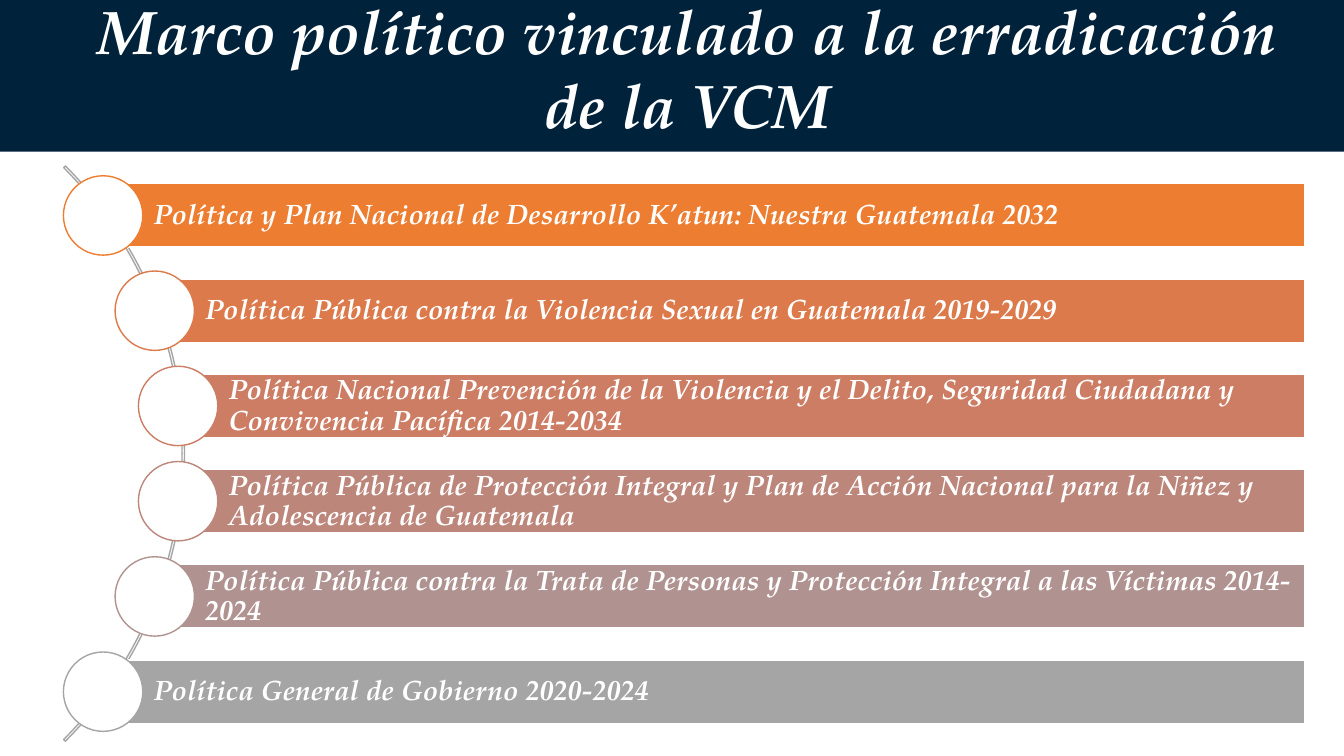
from dataclasses import dataclass
from math import sqrt

from pptx import Presentation
from pptx.dml.color import RGBColor
from pptx.enum.shapes import MSO_SHAPE as SHAPE
from pptx.enum.text import MSO_ANCHOR as ANCHOR, PP_ALIGN as ALIGN
from pptx.util import Cm, Pt


@dataclass(frozen=True)
class Theme:
    font: str = "TeX Gyre Pagella"
    white: str = "FFFFFF"
    navy: str = "00223B"
    gray: str = "A5A5A5"
    title_size: int = 44
    bar_size: int = 20


THEME = Theme()
SLIDE_W, SLIDE_H = 33.87, 19.05
TITLE = "Marco político vinculado a la erradicación de la VCM"
POLICIES = [
    ("Política y Plan Nacional de Desarrollo K’atun: Nuestra Guatemala 2032", "ED7D31"),
    ("Política Pública contra la Violencia Sexual en Guatemala 2019-2029", "DC7A4B"),
    ("Política Nacional Prevención de la Violencia y el Delito, Seguridad Ciudadana y "
     "Convivencia Pacífica 2014-2034", "CC7D64"),
    ("Política Pública de Protección Integral y Plan de Acción Nacional para la Niñez y "
     "Adolescencia de Guatemala", "BD867B"),
    ("Política Pública contra la Trata de Personas y Protección Integral a las Víctimas "
     "2014-2024", "B09391"),
    ("Política General de Gobierno 2020-2024", THEME.gray),
]
ARC_X, ARC_Y, ARC_R = -5.6, 11.43, 10.25
NODE_R, NODE_SIZE = 10.16, 2.0
ROW_STEP, BAR_H, BAR_RIGHT = 2.4, 1.6, 32.87


def add_block(slide, kind, x, y, w, h, fill=None, line=None):
    sp = slide.shapes.add_shape(kind, Cm(x), Cm(y), Cm(w), Cm(h))
    sp.shadow.inherit = False
    if fill:
        sp.fill.solid()
        sp.fill.fore_color.rgb = RGBColor.from_string(fill)
    else:
        sp.fill.background()
    if line:
        sp.line.color.rgb = RGBColor.from_string(line)
        sp.line.width = Pt(1)
    else:
        sp.line.fill.background()
    return sp


def write_text(sp, text, *, size, align=ALIGN.LEFT, spacing=1.0, insets=(0.25, 0.13, 0.25, 0.13)):
    tf = sp.text_frame
    tf.word_wrap = True
    tf.vertical_anchor = ANCHOR.MIDDLE
    tf.margin_left, tf.margin_top, tf.margin_right, tf.margin_bottom = map(Cm, insets)
    p = tf.paragraphs[0]
    p.alignment = align
    p.line_spacing = spacing
    r = p.add_run()
    r.text = text
    r.font.name = THEME.font
    r.font.size = Pt(size)
    r.font.bold = r.font.italic = True
    r.font.color.rgb = RGBColor.from_string(THEME.white)


def add_arc(slide):
    sp = add_block(slide, SHAPE.BLOCK_ARC, ARC_X - ARC_R, ARC_Y - ARC_R,
                   2 * ARC_R, 2 * ARC_R, line=THEME.gray)
    for i, value in enumerate((189, 27, 0.003)):
        sp.adjustments[i] = value


def add_policy(slide, index, text, color):
    dy = (index - (len(POLICIES) - 1) / 2) * ROW_STEP
    x, y = ARC_X + sqrt(NODE_R ** 2 - dy ** 2), ARC_Y + dy
    bar = add_block(slide, SHAPE.RECTANGLE, x, y - BAR_H / 2, BAR_RIGHT - x, BAR_H,
                    fill=color, line=THEME.white)
    write_text(bar, text, size=THEME.bar_size, spacing=0.9, insets=(1.27, 0.15, 0.15, 0.15))
    add_block(slide, SHAPE.OVAL, x - NODE_SIZE / 2, y - NODE_SIZE / 2, NODE_SIZE, NODE_SIZE,
              fill=THEME.white, line=color)


def add_title(slide):
    add_block(slide, SHAPE.RECTANGLE, 0, -0.05, SLIDE_W, 3.87, fill=THEME.navy)
    sp = slide.shapes.add_textbox(Cm(1.6), Cm(0.66), Cm(31.47), Cm(2.06))
    write_text(sp, TITLE, size=THEME.title_size, align=ALIGN.CENTER)


def main():
    prs = Presentation()
    prs.slide_width, prs.slide_height = Cm(SLIDE_W), Cm(SLIDE_H)
    slide = prs.slides.add_slide(prs.slide_layouts[6])
    add_arc(slide)
    for index, (text, color) in enumerate(POLICIES):
        add_policy(slide, index, text, color)
    add_title(slide)
    prs.save("out.pptx")


if __name__ == "__main__":
    main()
